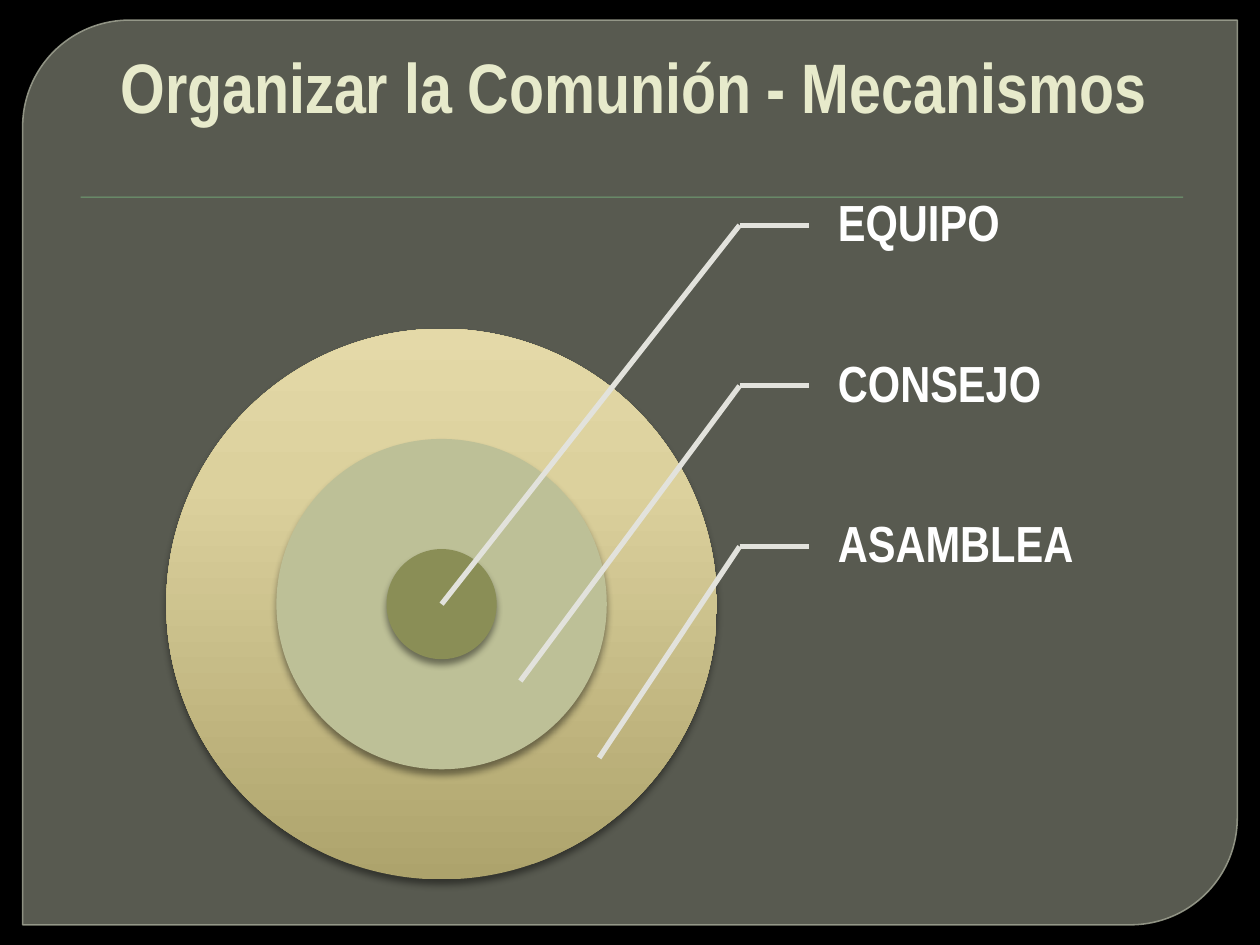
from copy import deepcopy
from dataclasses import dataclass

from lxml.etree import SubElement
from pptx import Presentation
from pptx.dml.color import RGBColor
from pptx.enum.shapes import MSO_CONNECTOR as Connector, MSO_SHAPE as Preset
from pptx.enum.text import MSO_ANCHOR as Anchor, PP_ALIGN as Align
from pptx.oxml.ns import qn
from pptx.util import Inches, Pt

COLUMNS, ROWS = 100, 75
CELL = Inches(0.1)
FONT = "Arial Narrow"
COLORS = {
    "background": "000000",
    "panel": "888B7B",
    "panel_edge": "9DA090",
    "rule": "72A376",
    "title": "E7EACB",
    "label": "FFFFFF",
    "leader": "E2E2DC",
    "council": "BDC097",
    "team": "8A8E56",
    "shadow": "000000",
}
ASSEMBLY_STOPS = ((0, "ADA36C"), (0.72, "DCD19D"), (1, "E4D9A8"))

CENTER_X, CENTER_Y = 35.05, 47.95
RING_UNIT = 4.37
LABEL_LEFT, LABEL_TOP = 64.2, 11.5
LABEL_WIDTH, LABEL_HEIGHT = 21.9, 12.75
ELBOW_X = 58.7
TARGET_STEP_X, TARGET_STEP_Y = 6.25, 6.1


@dataclass(frozen=True)
class Area:
    left: float
    top: float
    width: float
    height: float

    def lengths(self) -> tuple:
        return tuple(cells(n) for n in (self.left, self.top, self.width, self.height))


@dataclass(frozen=True)
class Ring:
    units: int
    color: str | None


@dataclass(frozen=True)
class Shadow:
    opacity: int
    blur: float
    distance: float


RINGS = (Ring(5, None), Ring(3, "council"), Ring(1, "team"))
LABELS = ("EQUIPO", "CONSEJO", "ASAMBLEA")
RING_SHADOW = Shadow(43, 4, 3)
RULE_SHADOW = Shadow(75, 1, 1)


def cells(count: float) -> int:
    return round(count * CELL)


def rgb(name: str) -> RGBColor:
    return RGBColor.from_string(COLORS[name])


def set_opacity(color_element, percent: int) -> None:
    SubElement(color_element, qn("a:alpha")).set("val", str(percent * 1000))


def add_shadow(shape, shadow: Shadow) -> None:
    effects = shape._element.spPr.find(qn("a:effectLst"))
    outer = SubElement(effects, qn("a:outerShdw"), blurRad=str(Pt(shadow.blur)),
                       dist=str(Pt(shadow.distance)), dir="5400000", rotWithShape="0")
    color = SubElement(outer, qn("a:srgbClr"), val=COLORS["shadow"])
    set_opacity(color, shadow.opacity)


def add_plain_shape(page, preset: Preset, area: Area, color: str | None):
    shape = page.shapes.add_shape(preset, *area.lengths())
    shape.shadow.inherit = False
    shape.line.fill.background()
    if color:
        shape.fill.solid()
        shape.fill.fore_color.rgb = rgb(color)
    return shape


def add_panel(page) -> None:
    panel = add_plain_shape(page, Preset.ROUND_2_DIAG_RECTANGLE,
                            Area(1.8, 1.6, 96.4, 71.8), "panel")
    panel.adjustments[0] = 0.118
    panel.adjustments[1] = 0
    panel.line.color.rgb = rgb("panel_edge")
    panel.line.width = Pt(0.87)
    properties = panel._element.spPr
    for parent, opacity in ((properties, 65), (properties.find(qn("a:ln")), 88)):
        set_opacity(parent.find(qn("a:solidFill")).find(qn("a:srgbClr")), opacity)


def set_gradient(shape, stops: tuple) -> None:
    shape.fill.gradient()
    shape.fill.gradient_angle = 90
    stop_list = shape._element.spPr.find(qn("a:gradFill")).find(qn("a:gsLst"))
    stop_list.insert(1, deepcopy(stop_list[0]))
    for stop, (position, color) in zip(shape.fill.gradient_stops, stops):
        stop.position = position
        stop.color.rgb = RGBColor.from_string(color)


def add_ring(page, ring: Ring) -> None:
    radius = ring.units * RING_UNIT
    area = Area(CENTER_X - radius, CENTER_Y - radius, 2 * radius, 2 * radius)
    circle = add_plain_shape(page, Preset.OVAL, area, ring.color)
    if ring.color is None:
        set_gradient(circle, ASSEMBLY_STOPS)
    add_shadow(circle, RING_SHADOW)


def add_text(page, area: Area, text: str, size: int, color: str, align: Align):
    box = page.shapes.add_textbox(*area.lengths())
    frame = box.text_frame
    frame.word_wrap = True
    frame.vertical_anchor = Anchor.MIDDLE
    frame.text = text
    para = frame.paragraphs[0]
    para.alignment = align
    font = para.runs[0].font
    font.name, font.size, font.bold = FONT, Pt(size), True
    font.color.rgb = rgb(color)
    return frame


def add_leader(page, start: tuple, end: tuple) -> None:
    line = page.shapes.add_connector(Connector.STRAIGHT, *map(cells, start + end))
    line.line.color.rgb = rgb("leader")
    line.line.width = Pt(3)
    SubElement(line._element.spPr, qn("a:effectLst"))


def add_callout(page, index: int, text: str) -> None:
    top = LABEL_TOP + index * LABEL_HEIGHT
    area = Area(LABEL_LEFT, top, LABEL_WIDTH, LABEL_HEIGHT)
    frame = add_text(page, area, text, 29, "label", Align.LEFT)
    frame.margin_left = Inches(0.23)
    frame.margin_top = frame.margin_right = frame.margin_bottom = Inches(0.04)
    frame.paragraphs[0].line_spacing = 0.9
    elbow = (ELBOW_X, top + LABEL_HEIGHT / 2)
    target = (CENTER_X + index * TARGET_STEP_X, CENTER_Y + index * TARGET_STEP_Y)
    add_leader(page, elbow, (LABEL_LEFT, elbow[1]))
    add_leader(page, elbow, target)


def main() -> None:
    deck = Presentation()
    deck.slide_width, deck.slide_height = cells(COLUMNS), cells(ROWS)
    page = deck.slides.add_slide(deck.slide_layouts[6])
    page.background.fill.solid()
    page.background.fill.fore_color.rgb = rgb("background")
    add_panel(page)
    rule = add_plain_shape(page, Preset.RECTANGLE, Area(6.4, 15.6, 87.5, 0.1), "rule")
    add_shadow(rule, RULE_SHADOW)
    add_text(page, Area(5.3, 2.8, 90, 8), "Organizar la Comunión - Mecanismos",
             40, "title", Align.CENTER)
    for ring in RINGS:
        add_ring(page, ring)
    for index, text in enumerate(LABELS):
        add_callout(page, index, text)
    deck.save("out.pptx")


if __name__ == "__main__":
    main()
